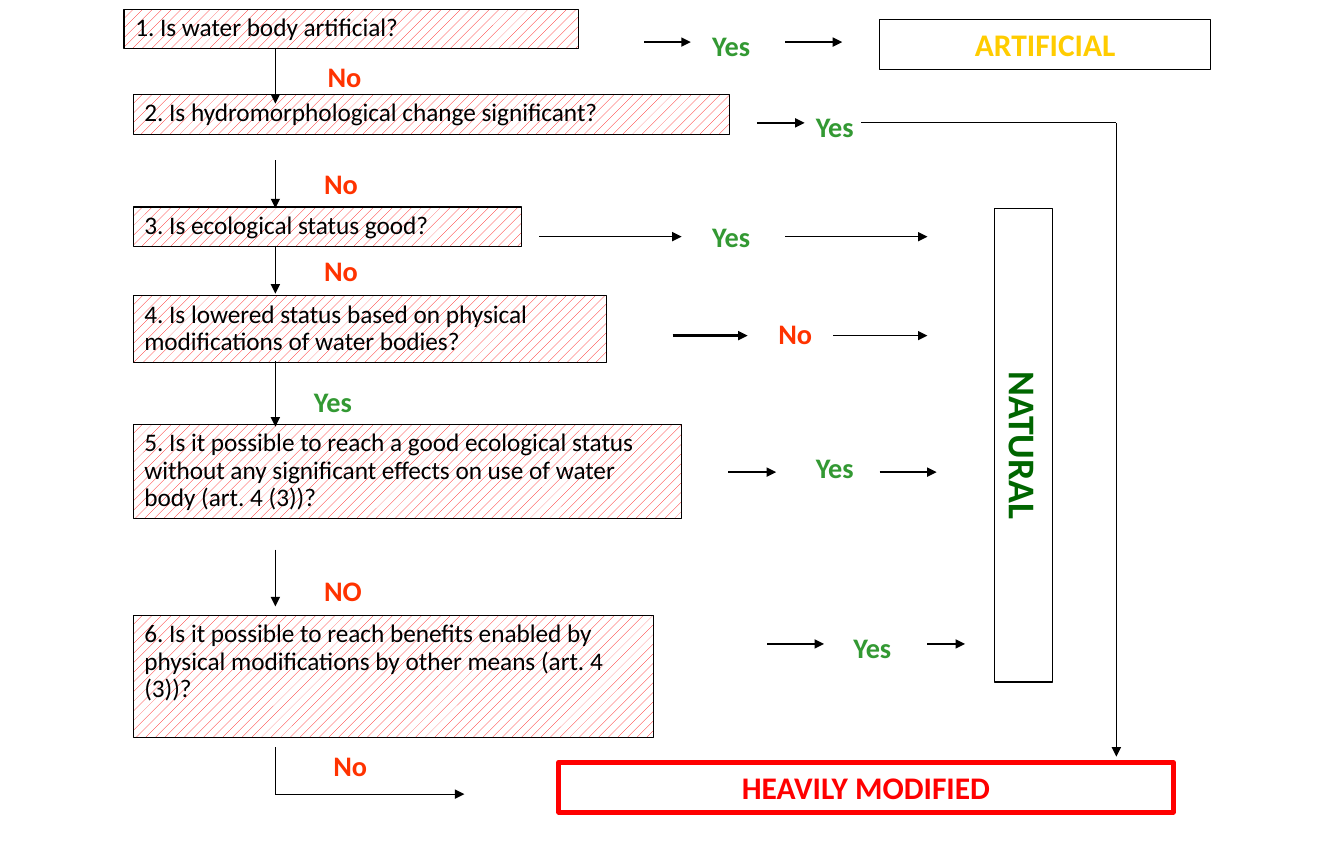
from lxml import etree
from pptx import Presentation
from pptx.dml.color import RGBColor
from pptx.enum.dml import MSO_PATTERN
from pptx.enum.shapes import MSO_CONNECTOR, MSO_SHAPE
from pptx.enum.text import MSO_ANCHOR, PP_ALIGN
from pptx.oxml.ns import qn
from pptx.util import Inches, Pt

DOTS = MSO_PATTERN.PERCENT_20
LINE = MSO_CONNECTOR.STRAIGHT
RECT = MSO_SHAPE.RECTANGLE
TOP = MSO_ANCHOR.TOP
LEFT, MID = PP_ALIGN.LEFT, PP_ALIGN.CENTER

FONT = "Calibri"
COLORS = {"ink": "000000", "paper": "FFFFFF", "red": "FF0000", "yes": "339933",
          "no": "FF3300", "gold": "FFCC00", "green": "006600"}

STEPS = [
    ("1. Is water body artificial?", 1.09, 0.08, 3.99, 0.35),
    ("2. Is hydromorphological change significant?", 1.17, 0.83, 5.24, 0.35),
    ("3. Is ecological status good?", 1.17, 1.82, 3.41, 0.35),
    ("4. Is lowered status based on physical modifications of water bodies?",
     1.17, 2.6, 4.16, 0.59),
    ("5. Is it possible to reach a good ecological status without any "
     "significant effects on use of water body (art. 4 (3))?", 1.17, 3.73, 4.82, 0.83),
    ("6. Is it possible to reach benefits enabled by physical modifications "
     "by other means (art. 4 (3))?", 1.17, 5.41, 4.57, 1.07),
]

RESULTS = [
    ("ARTIFICIAL", 7.73, 0.17, 2.91, 0.44, 0, 19.9, "gold", "ink", 0.75),
    ("NATURAL", 6.91, 3.66, 4.16, 0.51, 90, 23.9, "green", "ink", 0.75),
    ("HEAVILY MODIFIED", 4.91, 6.7, 5.4, 0.44, 0, 19.9, "red", "red", 3),
]

ANSWERS = [
    ("Yes", 6.16, 0.2), ("Yes", 7.07, 0.91), ("Yes", 6.16, 1.88),
    ("No", 6.74, 2.73), ("Yes", 7.07, 3.91), ("Yes", 7.4, 5.49),
    ("No", 2.78, 0.47), ("No", 2.75, 1.41), ("No", 2.75, 2.18),
    ("Yes", 2.66, 3.33), ("NO", 2.75, 4.99), ("No", 2.83, 6.53),
]
ANSWER_SIZE = (0.91, 0.4)

TRUNK, BYPASS = 2.42, 9.81
DOWN = [
    (TRUNK, 0.42, 0.91, 0.75), (TRUNK, 1.41, 1.83, 1), (TRUNK, 2.16, 2.58, 1),
    (TRUNK, 3.17, 3.75, 1), (TRUNK, 4.83, 5.33, 1), (BYPASS, 1.08, 6.65, 0.75),
]
ACROSS = [
    (0.37, 5.66, 6.07, 1), (0.37, 6.9, 7.4, 1), (1.08, 6.65, 7.07, 1),
    (2.08, 4.74, 5.99, 1), (2.08, 6.9, 8.15, 1),
    (2.95, 5.91, 6.57, 1.5), (2.95, 7.32, 8.15, 1),
    (4.15, 6.4, 6.82, 1), (4.15, 7.73, 8.23, 1),
    (5.66, 6.74, 7.24, 1.5), (5.66, 8.15, 8.48, 1), (6.98, TRUNK, 4.08, 0.75),
]
PLAIN = [(7.57, 1.08, BYPASS, 1.08), (TRUNK, 6.57, TRUNK, 6.98)]


def tint(name):
    return RGBColor.from_string(COLORS[name])


def write(shape, text, size, color, bold, align=LEFT, lead=1.0):
    frame = shape.text_frame
    frame.word_wrap = True
    frame.vertical_anchor = TOP
    para = frame.paragraphs[0]
    para.text = text
    para.alignment = align
    para.line_spacing = lead
    font = para.font
    font.name, font.size, font.bold = FONT, Pt(size), bold
    font.color.rgb = tint(color)


def add_box(slide, place, edge, width):
    box = slide.shapes.add_shape(RECT, *map(Inches, place))
    box.shadow.inherit = False
    box.line.color.rgb = tint(edge)
    box.line.width = Pt(width)
    return box


def add_line(slide, ends, width, arrow=True):
    link = slide.shapes.add_connector(LINE, *map(Inches, ends))
    link.line.color.rgb = tint("ink")
    link.line.width = Pt(width)
    if arrow:
        etree.SubElement(link.line._get_or_add_ln(), qn("a:tailEnd"), type="triangle")
    etree.SubElement(link._element.spPr, qn("a:effectLst"))


def main():
    deck = Presentation()
    deck.slide_width, deck.slide_height = Inches(11.81), Inches(7.48)
    slide = deck.slides.add_slide(deck.slide_layouts[6])

    for text, *place in STEPS:
        box = add_box(slide, place, "ink", 0.75)
        box.fill.patterned()
        box.fill.pattern = DOTS
        box.fill.fore_color.rgb = tint("red")
        box.fill.back_color.rgb = tint("paper")
        write(box, text, 16, "ink", False, lead=0.9)

    for text, x, y, w, h, turn, size, color, edge, width in RESULTS:
        box = add_box(slide, (x, y, w, h), edge, width)
        box.fill.background()
        box.rotation = turn
        write(box, text, size, color, True, MID)

    for text, x, y in ANSWERS:
        label = slide.shapes.add_textbox(*map(Inches, (x, y, *ANSWER_SIZE)))
        write(label, text, 17.9, text.lower(), True)

    for x, start, end, width in DOWN:
        add_line(slide, (x, start, x, end), width)
    for y, start, end, width in ACROSS:
        add_line(slide, (start, y, end, y), width)
    for ends in PLAIN:
        add_line(slide, ends, 0.75, arrow=False)

    deck.save("out.pptx")


if __name__ == "__main__":
    main()
